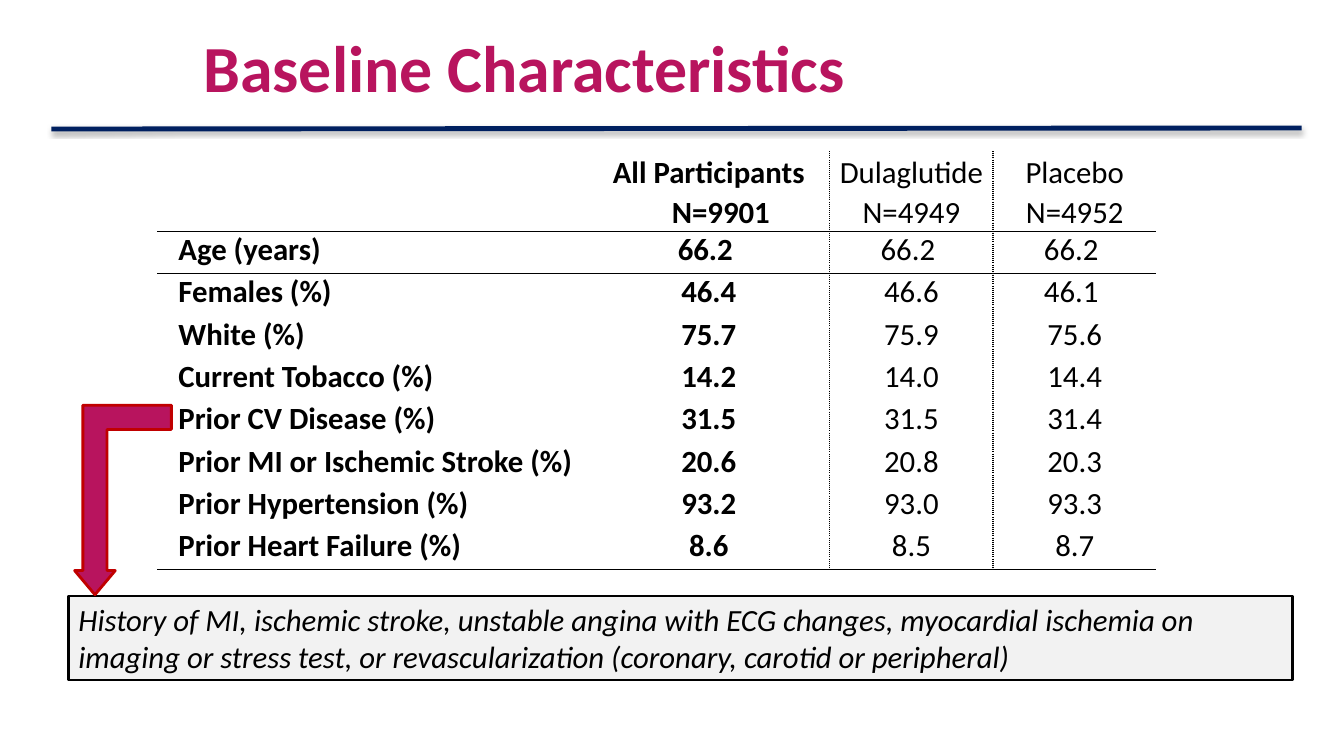
from dataclasses import dataclass

from lxml.etree import SubElement
from pptx import Presentation
from pptx.dml.color import RGBColor
from pptx.enum.shapes import MSO_CONNECTOR, MSO_SHAPE
from pptx.enum.text import MSO_ANCHOR, MSO_AUTO_SIZE, PP_ALIGN
from pptx.oxml import parse_xml
from pptx.oxml.ns import nsdecls, qn
from pptx.util import Emu, Pt


@dataclass(frozen=True)
class Theme:
    font: str = "Calibri"
    ink: str = "000000"
    accent: str = "B8145E"
    edge: str = "C00000"
    navy: str = "002060"
    pale: str = "F2F2F2"
    title: int = 47
    body: int = 22


THEME = Theme()
SCALE = 9144  # EMU in one px, 100 px to the inch
HEADS = [
    ("All Participants", "N=9901"),
    ("Dulaglutide", "N=4949"),
    ("Placebo", "N=4952"),
]
# Left margin and first-line indent that stagger the two lines of each heading
SHIFTS = [(24, -54), (0, 0), (0, -22)]
ROWS = [
    ("Age (years)", "66.2 ", "66.2 ", "66.2 "),
    ("Females (%)", "46.4", "46.6", "46.1 "),
    ("White (%)", "75.7", "75.9", "75.6"),
    ("Current Tobacco (%)", "14.2", "14.0", "14.4"),
    ("Prior CV Disease (%)", "31.5", "31.5", "31.4"),
    ("Prior MI or Ischemic Stroke (%)", "20.6", "20.8", "20.3"),
    ("Prior Hypertension (%)", "93.2", "93.0", "93.3"),
    ("Prior Heart Failure (%)", "8.6", "8.5", "8.7"),
]
WIDTHS = [427, 240, 162, 162]
NOTE = (
    "History of MI, ischemic stroke, unstable angina with ECG changes, "
    "myocardial ischemia on imaging or stress test, or revascularization "
    "(coronary, carotid or peripheral)"
)


def px(count):
    return Emu(count * SCALE)


def box(*sides):
    return [px(side) for side in sides]


def rgb(code):
    return RGBColor.from_string(code)


def add_run(para, text, size=THEME.body, color=THEME.ink, bold=False, italic=False):
    run = para.add_run()
    run.text = text
    font = run.font
    font.name, font.size = THEME.font, Pt(size)
    font.bold, font.italic = bold, italic
    font.color.rgb = rgb(color)


def add_rule(slide):
    """Draw the line under the title, with its soft shadow."""
    rule = slide.shapes.add_connector(MSO_CONNECTOR.STRAIGHT, *box(51, 128, 1291, 127))
    rule.line.color.rgb = rgb(THEME.navy)
    rule.line.width = Pt(3.5)
    rule._element.spPr.append(parse_xml(
        f'<a:effectLst {nsdecls("a")}>'
        f'<a:outerShdw blurRad="{Pt(3.1)}" dist="{Pt(1.8)}" dir="5400000" rotWithShape="0">'
        f'<a:srgbClr val="{THEME.ink}"><a:alpha val="35000"/></a:srgbClr>'
        '</a:outerShdw></a:effectLst>'
    ))


def add_title(slide, text):
    frame = slide.shapes.add_textbox(*box(192, 8, 1123, 125)).text_frame
    frame.word_wrap = True
    frame.vertical_anchor = MSO_ANCHOR.MIDDLE
    para = frame.paragraphs[0]
    para.line_spacing = 0.9
    add_run(para, text, THEME.title, THEME.accent, bold=True)


def add_form(slide, kind, place, fill, edge, width):
    form = slide.shapes.add_shape(kind, *box(*place))
    form.shadow.inherit = False
    form.fill.solid()
    form.fill.fore_color.rgb = rgb(fill)
    form.line.color.rgb = rgb(edge)
    form.line.width = Pt(width)
    return form


def set_edges(cell, edges):
    """Give each side a dash style, or no line where none is named."""
    props = cell._tc.get_or_add_tcPr()
    for spot, side in enumerate("LRTB"):
        line = SubElement(props, qn(f"a:ln{side}"), w=str(Pt(1)))
        props.insert(spot, line)
        if side in edges:
            fill = SubElement(line, qn("a:solidFill"))
            SubElement(fill, qn("a:srgbClr"), val=THEME.ink)
            SubElement(line, qn("a:prstDash"), val=edges[side])
        else:
            SubElement(line, qn("a:noFill"))


def cell_edges(row, col):
    edges = {}
    if row in (1, 2):
        edges["T"] = "solid"
    if row in (0, 1, len(ROWS)):
        edges["B"] = "solid"
    if col in (2, 3):
        edges["L"] = "sysDot"
    if col in (1, 2):
        edges["R"] = "sysDot"
    return edges


def fill_head(para, lines, shift):
    para.line_spacing = 1.07
    margin, indent = box(*shift)
    props = para._p.get_or_add_pPr()
    props.set("marL", str(margin))
    props.set("indent", str(indent))
    bold = lines == HEADS[0]
    add_run(para, lines[0], bold=bold)
    para.add_line_break()
    add_run(para, lines[1], bold=bold)


def add_grid(slide):
    count = len(ROWS) + 1
    table = slide.shapes.add_table(
        count, len(WIDTHS), *box(156, 150, sum(WIDTHS), 67 + 42 * len(ROWS))
    ).table
    table.first_row = table.horz_banding = False
    for col, width in enumerate(WIDTHS):
        table.columns[col].width = px(width)
    for row in range(count):
        table.rows[row].height = px(42 if row else 67)
        for col in range(len(WIDTHS)):
            cell = table.cell(row, col)
            cell.fill.background()
            cell.margin_left = px(21 if col == 0 else 7)
            cell.margin_right = px(7)
            cell.margin_top = cell.margin_bottom = 0
            set_edges(cell, cell_edges(row, col))
            para = cell.text_frame.paragraphs[0]
            para.space_after = Pt(8)
            para.alignment = PP_ALIGN.CENTER if col else PP_ALIGN.LEFT
            if row:
                add_run(para, ROWS[row - 1][col], bold=col < 2)
            elif col:
                fill_head(para, HEADS[col - 1], SHIFTS[col - 1])


def add_note(slide):
    note = add_form(slide, MSO_SHAPE.RECTANGLE, (68, 591, 1214, 84),
                    THEME.pale, THEME.ink, 1.5)
    frame = note.text_frame
    frame.word_wrap = True
    frame.auto_size = MSO_AUTO_SIZE.SHAPE_TO_FIT_TEXT
    frame.vertical_anchor = MSO_ANCHOR.TOP
    para = frame.paragraphs[0]
    para.alignment = PP_ALIGN.LEFT
    add_run(para, NOTE, italic=True)


def add_arrow(slide):
    arrow = add_form(slide, MSO_SHAPE.BENT_UP_ARROW, (74, 402, 96, 188),
                     THEME.accent, THEME.edge, 2)
    arrow.rotation = 180
    for spot, share in enumerate((0.25, 0.21, 0.25)):
        arrow.adjustments[spot] = share


def main():
    deck = Presentation()
    deck.slide_width, deck.slide_height = box(1333, 750)
    slide = deck.slides.add_slide(deck.slide_layouts[6])
    add_rule(slide)
    add_grid(slide)
    add_note(slide)
    add_arrow(slide)
    add_title(slide, "Baseline Characteristics")
    deck.save("out.pptx")


if __name__ == "__main__":
    main()
